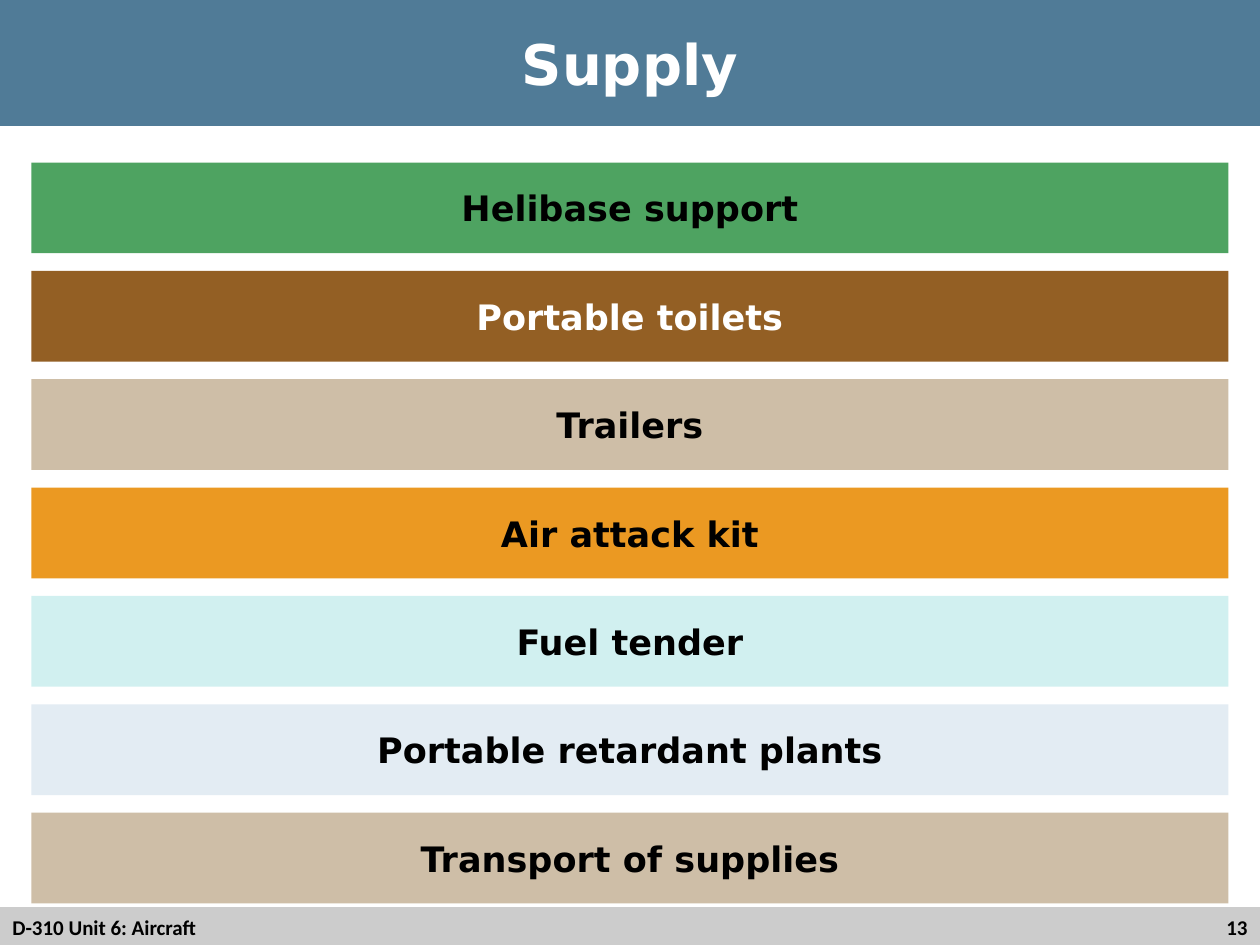
from pptx import Presentation
from pptx import util as u
from pptx.dml.color import RGBColor
from pptx.enum import shapes, text

WHITE = RGBColor(0xFF, 0xFF, 0xFF)
BLACK = RGBColor(0x00, 0x00, 0x00)
STEEL = RGBColor(0x50, 0x7B, 0x97)
GREY = RGBColor(0xCC, 0xCC, 0xCC)
GREEN = RGBColor(0x4E, 0xA3, 0x61)
BROWN = RGBColor(0x93, 0x5F, 0x24)
TAN = RGBColor(0xCE, 0xBE, 0xA7)
ORANGE = RGBColor(0xEB, 0x99, 0x22)
AQUA = RGBColor(0xD1, 0xF0, 0xF0)
MIST = RGBColor(0xE3, 0xEC, 0xF3)

HEADING_FONT = "DejaVu Sans"
FOOTER_FONT = "Calibri"

SUPPLIES = [
    ("Helibase support", GREEN, BLACK),
    ("Portable toilets", BROWN, WHITE),
    ("Trailers", TAN, BLACK),
    ("Air attack kit", ORANGE, BLACK),
    ("Fuel tender", AQUA, BLACK),
    ("Portable retardant plants", MIST, BLACK),
    ("Transport of supplies", TAN, BLACK),
]


def add_band(slide, left, top, width, height, fill):
    band = slide.shapes.add_shape(
        shapes.MSO_SHAPE.RECTANGLE, left, top, width, height
    )
    band.shadow.inherit = False
    band.fill.solid()
    band.fill.fore_color.rgb = fill
    band.line.fill.background()
    return band


def write(holder, wording, size, font, color, align):
    frame = holder.text_frame
    frame.word_wrap = True
    frame.vertical_anchor = text.MSO_ANCHOR.MIDDLE
    line = frame.paragraphs[0]
    line.alignment = align
    run = line.add_run()
    run.text = wording
    run.font.size = u.Pt(size)
    run.font.name = font
    run.font.bold = True
    run.font.color.rgb = color


def add_footer(slide, left, top, width, height):
    add_band(slide, left, top, width, height, GREY)
    number_width = u.Inches(2.33)
    entries = [
        ("D-310 Unit 6: Aircraft", left, u.Inches(6), text.PP_ALIGN.LEFT),
        ("13", left + width - number_width, number_width, text.PP_ALIGN.RIGHT),
    ]
    for wording, entry_left, entry_width, align in entries:
        entry = slide.shapes.add_textbox(entry_left, top, entry_width, height)
        write(entry, wording, 12, FOOTER_FONT, BLACK, align)


def add_title(slide, left, top, width, height):
    title = add_band(slide, left, top, width, height, STEEL)
    write(title, "Supply", 32, HEADING_FONT, WHITE, text.PP_ALIGN.CENTER)


def add_supplies(slide, left, top, width, height):
    gap = u.Inches(0.14)
    bar_height = (height - gap * (len(SUPPLIES) - 1)) // len(SUPPLIES)
    for index, (wording, fill, color) in enumerate(SUPPLIES):
        bar_top = top + index * (bar_height + gap)
        bar = add_band(slide, left, bar_top, width, bar_height, fill)
        write(bar, wording, 20, HEADING_FONT, color, text.PP_ALIGN.CENTER)


def main():
    deck = Presentation()
    deck.slide_width = u.Inches(10)
    deck.slide_height = u.Inches(7.5)
    slide = deck.slides.add_slide(deck.slide_layouts[6])
    add_footer(slide, 0, u.Inches(7.2), deck.slide_width, u.Inches(0.32))
    add_title(slide, 0, 0, deck.slide_width, u.Inches(1))
    add_supplies(slide, u.Inches(0.25), u.Inches(1.29), u.Inches(9.5), u.Inches(5.88))
    deck.save("out.pptx")


if __name__ == "__main__":
    main()
